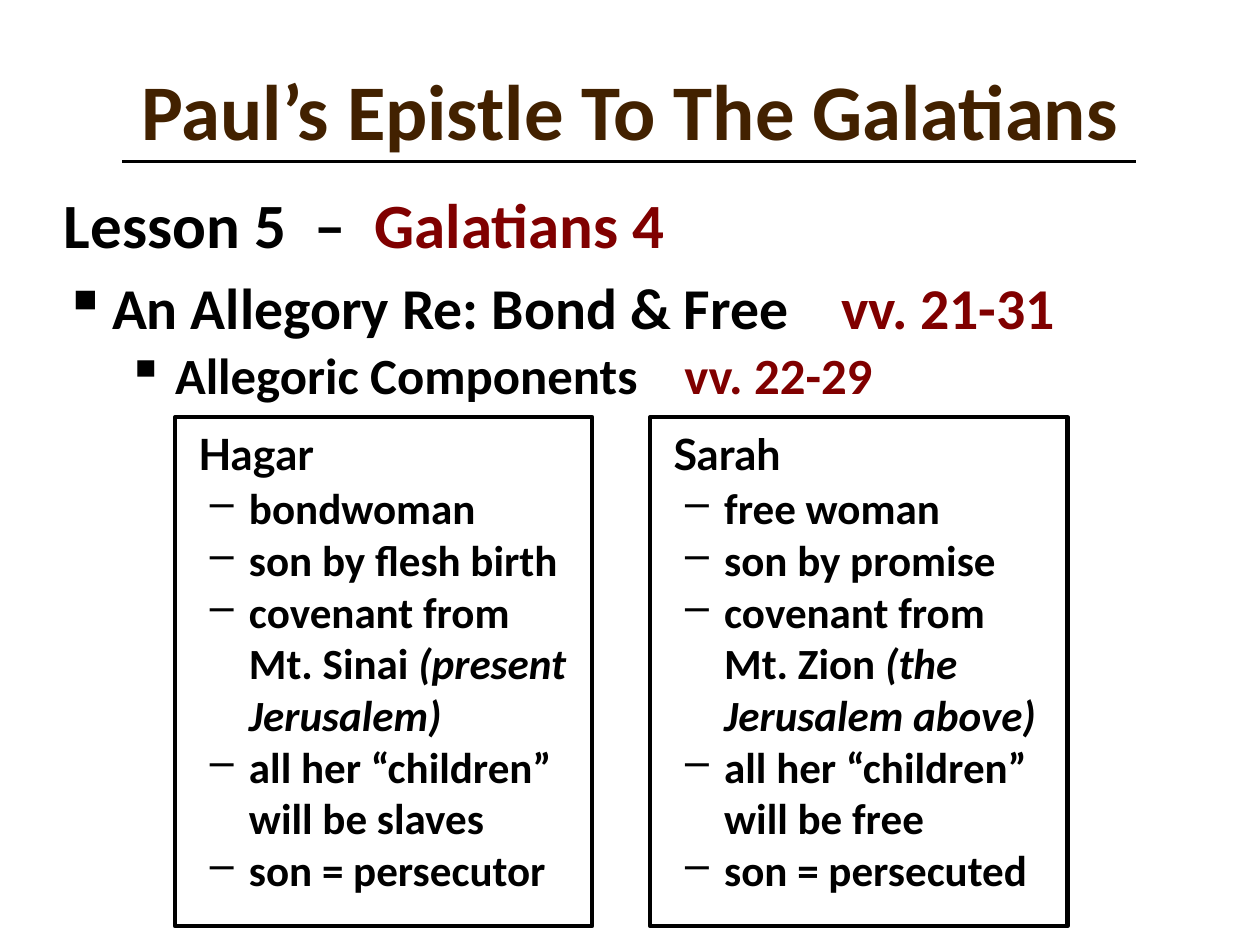
from lxml import etree
from pptx import Presentation
from pptx import util as u
from pptx.dml.color import RGBColor
from pptx.enum import shapes, text
from pptx.oxml import ns

BROWN = RGBColor(0x42, 0x21, 0x00)
MAROON = RGBColor(0x80, 0x00, 0x00)
BLACK = RGBColor(0x00, 0x00, 0x00)
SPACE_WIDTH = 0.226


def add_box(parent, left, top, width, height, anchor=text.MSO_ANCHOR.TOP):
    box = parent.add_textbox(u.Cm(left), u.Cm(top), u.Cm(width), u.Cm(height))
    box.text_frame.word_wrap = True
    box.text_frame.vertical_anchor = anchor
    return box.text_frame


def add_para(frame, spans, size, layout, font="Calibri", margin=0, hang=0, bullet=None):
    para = frame.paragraphs[0]
    if para.runs:
        para = frame.add_paragraph()
    properties = para._p.get_or_add_pPr()
    properties.set("marL", str(u.Cm(margin)))
    properties.set("indent", str(-u.Cm(hang)))
    for name, value in layout.items():
        setattr(para, name, value)
    if bullet:
        etree.SubElement(properties, ns.qn("a:buChar"), char=bullet)
    else:
        etree.SubElement(properties, ns.qn("a:buNone"))
    for words, color, italic, spaces in spans:
        if words == "\n":
            para.add_line_break()
            continue
        span = para.add_run()
        span.text = words
        look = {"name": font, "size": u.Pt(size), "bold": True, "italic": italic}
        for name, value in look.items():
            setattr(span.font, name, value)
        span.font.color.rgb = color
        if spaces > 1:
            gap = round((spaces - 1) * SPACE_WIDTH * size * 100)
            span.font._element.set("spc", str(gap))


deck = Presentation()
deck.slide_width, deck.slide_height = u.Cm(25.4), u.Cm(19.05)
page = deck.slides.add_slide(deck.slide_layouts[6])

title = add_box(page.shapes, 1.75, 0.94, 21.89, 2.77, text.MSO_ANCHOR.MIDDLE)
add_para(title, [("Paul’s Epistle To The Galatians", BROWN, False, 1)], 45,
         {"alignment": text.PP_ALIGN.CENTER, "line_spacing": 0.9})

outline = add_box(page.shapes, 1.04, 3.78, 23.9, 14.27)
OUTLINE = [
    (["Lesson 5", "–"], "Galatians 4", 2, 36, 0, 0.97, 0.97, None),
    (["An Allegory Re: Bond & Free"], "vv. 21-31", 4, 33, 10, 0.97, 0.97, "▪"),
    (["Allegoric Components"], "vv. 22-29", 4, 29, 5, 2.24, 0.97, "▪"),
]
for labels, verses, spaces, size, before, margin, hang, bullet in OUTLINE:
    spans = []
    for label in labels:
        spans += [(label, BLACK, False, 1), (" ", BLACK, False, spaces)]
    spans.append((verses, MAROON, False, 1))
    add_para(outline, spans, size, {"line_spacing": 0.9, "space_before": u.Pt(before)},
             margin=margin, hang=hang, bullet=bullet)

rule = page.shapes.add_connector(shapes.MSO_CONNECTOR.STRAIGHT,
                                 u.Cm(2.46), u.Cm(3.25), u.Cm(22.91), u.Cm(3.25))
rule.line.color.rgb = BLACK
rule.line.width = u.Pt(1.5)
etree.SubElement(rule._element.spPr, ns.qn("a:effectLst"))

WOMEN = [
    ("Hagar", [["bondwoman"], ["son by flesh birth"],
               ["covenant from", "\n", "Mt. Sinai ", "(present", "\n", "Jerusalem)"],
               ["all her “children”", "\n", "will be slaves"], ["son = persecutor"]]),
    ("Sarah", [["free woman"], ["son by promise"],
               ["covenant from", "\n", "Mt. Zion ", "(the", "\n", "Jerusalem above)"],
               ["all her “children”", "\n", "will be free"], ["son = persecuted"]]),
]
for column, (woman, points) in enumerate(WOMEN):
    left = 3.53 + column * 9.58
    group = page.shapes.add_group_shape()
    traits = add_box(group.shapes, left + 0.22, 8.5, 8.08, 9.83)
    add_para(traits, [(woman, BLACK, False, 1)], 24.6, {"space_after": u.Pt(1.2)}, font="Lato")
    for point in points:
        spans = [(words, BLACK, words.startswith(("(", "Jerusalem")), 1) for words in point]
        add_para(traits, spans, 24.6, {"space_before": u.Pt(0)},
                 margin=1.02, hang=0.79, bullet="–")
    frame = group.shapes.add_shape(shapes.MSO_SHAPE.RECTANGLE,
                                   u.Cm(left), u.Cm(8.41), u.Cm(8.41), u.Cm(10.26))
    frame.shadow.inherit = False
    frame.fill.background()
    frame.line.color.rgb = BLACK
    frame.line.width = u.Pt(2.5)

deck.save("out.pptx")
